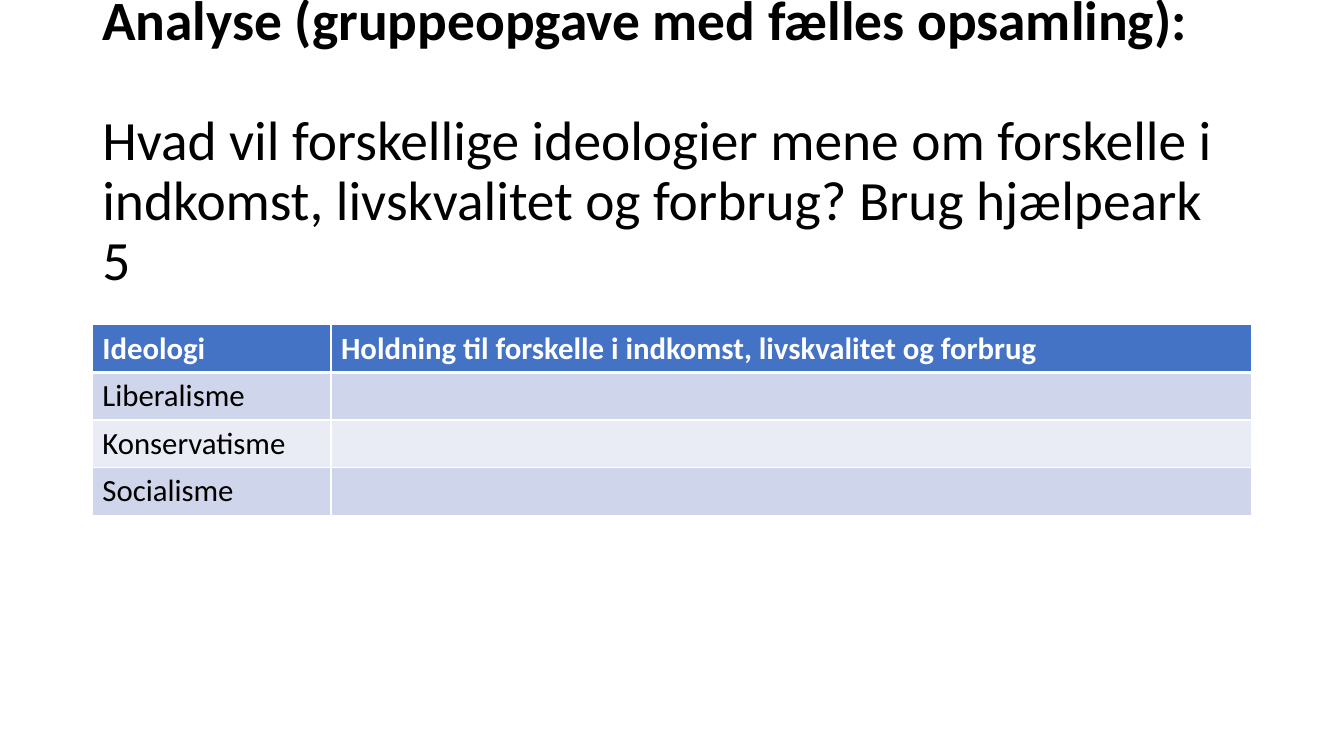
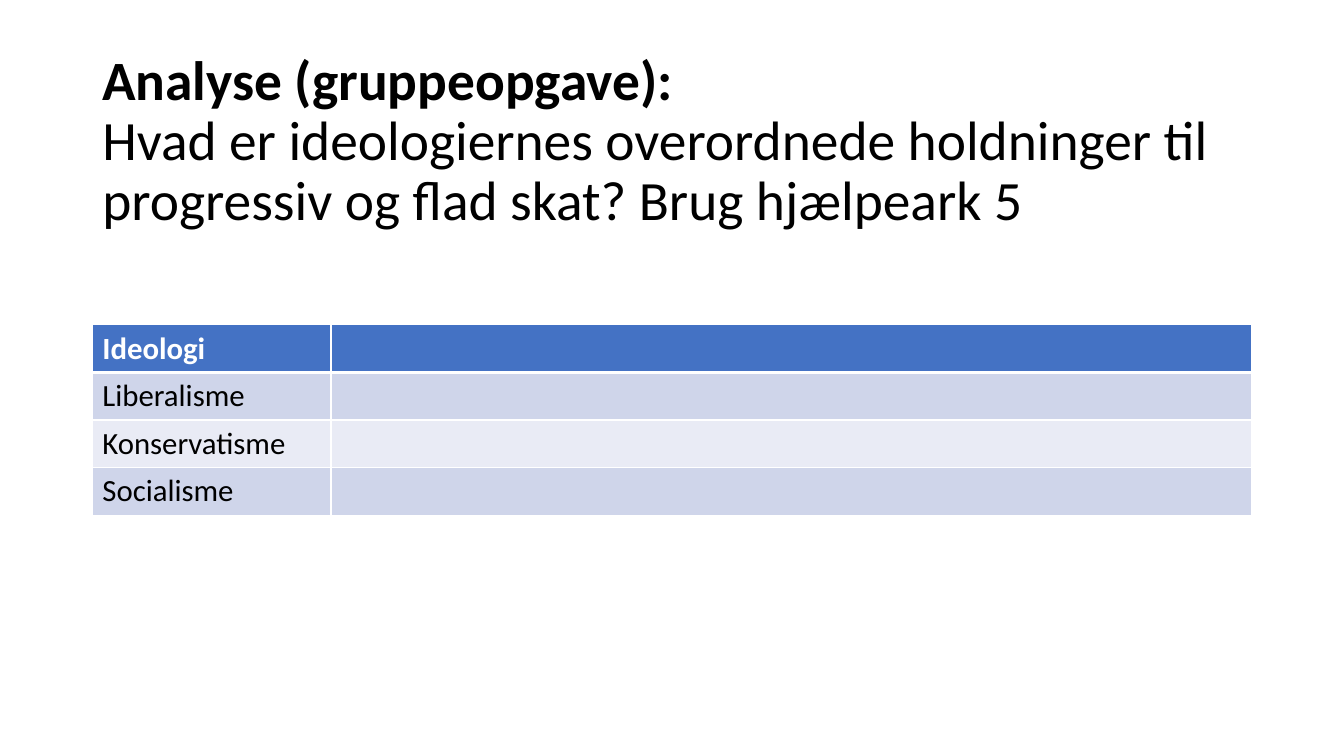
from lxml.etree import SubElement
from pptx import Presentation
from pptx.dml.color import RGBColor
from pptx.enum.text import MSO_ANCHOR
from pptx.oxml.ns import qn
from pptx.util import Pt

COLORS = {
    "text": "000000",
    "line": "FFFFFF",
    "header": "4472C4",
    "header_text": "FFFFFF",
    "odd": "CFD5EA",
    "even": "E9EBF5",
}
FONT = "Calibri"
TITLE_SIZE = 39.6
TABLE_SIZE = 22
LEFT, WIDTH = 66, 828
TITLE_TOP, TITLE_HEIGHT, TITLE_LINE = 50, 104, 43
TABLE_TOP, ROW_HEIGHT = 232, 34
COLUMNS = (170.5, 657.5)
IDEOLOGIES = ("Liberalisme", "Konservatisme", "Socialisme")


class Deck:
    """Holds the shared style and the current slide."""

    def __init__(self):
        self.prs = Presentation()
        self.prs.slide_width, self.prs.slide_height = Pt(960), Pt(540)
        self.s = None

    def add_slide(self):
        self.s = self.prs.slides.add_slide(self.prs.slide_layouts[6])

    def style(self, p, size, color, bold):
        for r in p.runs:
            r.font.name = FONT
            r.font.size = Pt(size)
            r.font.bold = bold
            r.font.color.rgb = RGBColor.from_string(COLORS[color])

    def title(self, heading, question, gap=0):
        sp = self.s.shapes.add_textbox(Pt(LEFT), Pt(TITLE_TOP), Pt(WIDTH), Pt(TITLE_HEIGHT))
        tf = sp.text_frame
        tf.word_wrap = True
        tf.vertical_anchor = MSO_ANCHOR.MIDDLE
        tf.text = f"{heading}\n{question}"
        for p, bold in zip(tf.paragraphs, (True, False)):
            p.line_spacing = 0.9
            self.style(p, TITLE_SIZE, "text", bold)
        tf.paragraphs[0].space_after = Pt(gap)

    def borders(self, cell, top, bottom):
        tcPr = cell._tc.get_or_add_tcPr()
        for side, width in (("L", 1), ("R", 1), ("T", top), ("B", bottom)):
            ln = SubElement(tcPr, qn(f"a:ln{side}"), w=str(Pt(width)))
            fill = SubElement(ln, qn("a:solidFill"))
            SubElement(fill, qn("a:srgbClr"), val=COLORS["line"])

    def table(self, rows):
        table = self.s.shapes.add_table(
            len(rows), len(COLUMNS), Pt(LEFT), Pt(TABLE_TOP), Pt(WIDTH), Pt(ROW_HEIGHT * len(rows))
        ).table
        for column, width in zip(table.columns, COLUMNS):
            column.width = Pt(width)
        for i, row in enumerate(rows):
            header = i == 0
            fill = "header" if header else "odd" if i % 2 else "even"
            for j, text in enumerate(row):
                cell = table.cell(i, j)
                self.borders(cell, 3 if i == 1 else 1, 3 if header else 1)
                cell.fill.solid()
                cell.fill.fore_color.rgb = RGBColor.from_string(COLORS[fill])
                if text:
                    cell.text_frame.text = text
                    color = "header_text" if header else "text"
                    self.style(cell.text_frame.paragraphs[0], TABLE_SIZE, color, header)

    def ideology_table(self, heading=""):
        self.table([("Ideologi", heading)] + [(name, "") for name in IDEOLOGIES])


def main():
    deck = Deck()

    deck.add_slide()
    deck.title(
        "Analyse (gruppeopgave med fælles opsamling):",
        "Hvad vil forskellige ideologier mene om forskelle i indkomst, "
        "livskvalitet og forbrug? Brug hjælpeark 5",
        gap=TITLE_LINE,
    )
    deck.ideology_table("Holdning til forskelle i indkomst, livskvalitet og forbrug")

    deck.add_slide()
    deck.title(
        "Analyse (gruppeopgave):",
        "Hvad er ideologiernes overordnede holdninger til progressiv og flad skat? "
        "Brug hjælpeark 5",
    )
    deck.ideology_table()

    deck.prs.save("out.pptx")


if __name__ == "__main__":
    main()
